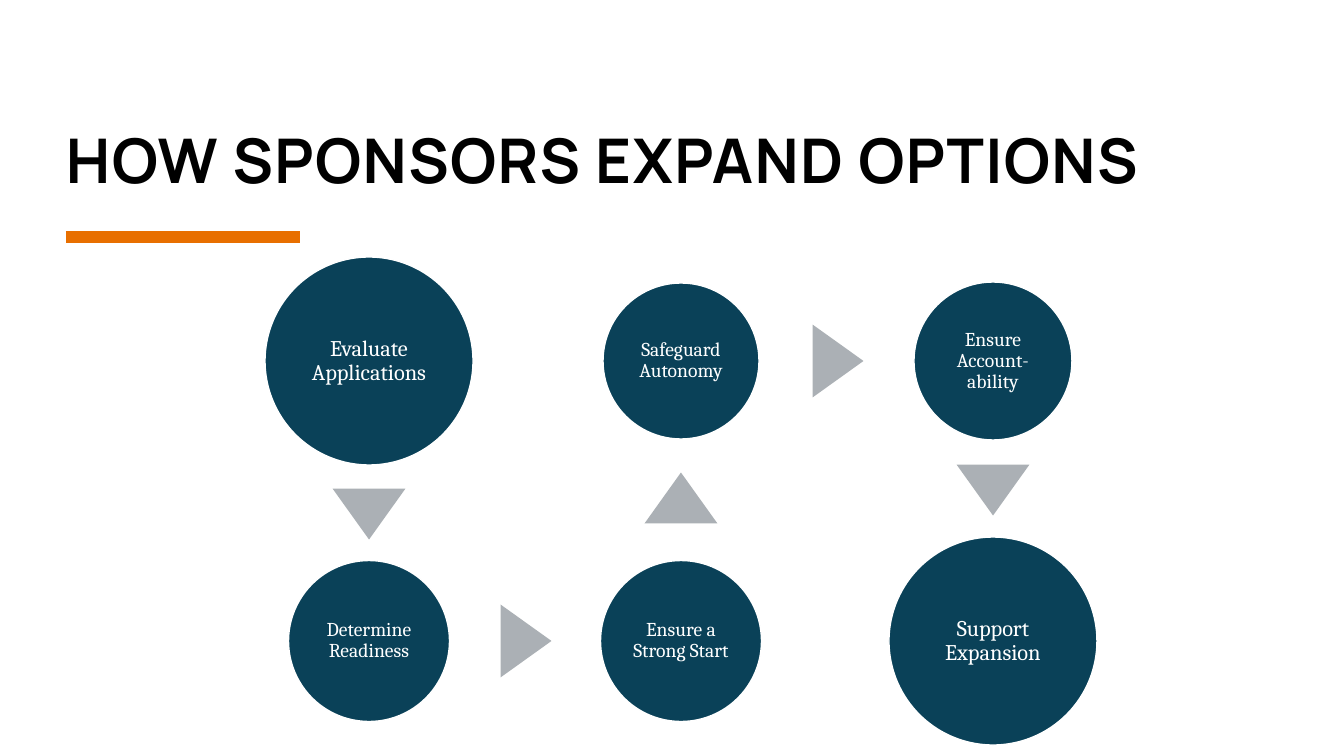
import pptx
import pptx.dml.color
import pptx.enum.shapes
import pptx.enum.text
import pptx.oxml.ns
import pptx.util
import lxml.etree

PX = 914400 / 100.8
COLORS = {"ink": "000000", "rule": "E86F00", "step": "0A4158",
          "arrow": "ABB0B5", "white": "FFFFFF"}
SHAPE = pptx.enum.shapes.MSO_SHAPE
ALIGN = pptx.enum.text.PP_ALIGN


def px(*sizes):
    return [pptx.util.Emu(round(size * PX)) for size in sizes]


def write(shape, text, inset, anchor, para, font, color):
    frame = shape.text_frame
    frame.text = text
    first = frame.paragraphs[0]
    margin = px(inset)[0]
    box = {"margin_left": margin, "margin_right": margin,
           "margin_top": margin, "margin_bottom": margin,
           "auto_size": pptx.enum.text.MSO_AUTO_SIZE.NONE,
           "vertical_anchor": anchor, "word_wrap": True}
    for part, values in ((frame, box), (first, para), (first.runs[0].font, font)):
        for name, value in values.items():
            setattr(part, name, value)
    first.runs[0].font.color.rgb = pptx.dml.color.RGBColor.from_string(COLORS[color])


deck = pptx.Presentation()
deck.slide_width, deck.slide_height = px(1344, 756)
slide = deck.slides.add_slide(deck.slide_layouts[5])

# Title
title = slide.shapes.title
title.left, title.top, title.width, title.height = px(66, 22, 1210, 173)
write(title, "HOW SPONSORS EXPAND OPTIONS", 0, pptx.enum.text.MSO_ANCHOR.BOTTOM,
      {"alignment": ALIGN.LEFT, "line_spacing": 0.8},
      {"name": "Manrope", "size": pptx.util.Pt(44), "bold": True}, "ink")
title.text_frame.paragraphs[0].runs[0].font._element.set("spc", "100")

# Rule under the title
rule = slide.shapes.add_connector(
    pptx.enum.shapes.MSO_CONNECTOR.STRAIGHT, *px(66, 237, 300, 237))
rule.line.color.rgb = pptx.dml.color.RGBColor.from_string(COLORS["rule"])
rule.line.width = pptx.util.Pt(8)
lxml.etree.SubElement(rule._element.spPr, pptx.oxml.ns.qn("a:effectLst"))

# Steps: column, row, width, text size, text
COLS = [369 + 312 * col for col in range(3)]
ROWS = [361, 641]
STEPS = [
    (0, 0, 208, 16, "Evaluate Applications"),
    (0, 1, 161, 14, "Determine Readiness"),
    (1, 1, 161, 14, "Ensure a Strong Start"),
    (1, 0, 156, 14, "Safeguard Autonomy"),
    (2, 0, 158, 14, "Ensure Account-ability"),
    (2, 1, 208, 16, "Support Expansion"),
]
for col, row, width, size, text in STEPS:
    step = slide.shapes.add_shape(SHAPE.OVAL, *px(
        COLS[col] - width / 2, ROWS[row] - width / 2, width, width))
    step.shadow.inherit = False
    step.fill.solid()
    step.fill.fore_color.rgb = pptx.dml.color.RGBColor.from_string(COLORS["step"])
    step.line.color.rgb = pptx.dml.color.RGBColor.from_string(COLORS["white"])
    step.line.width = pptx.util.Pt(1)
    write(step, text, 2, pptx.enum.text.MSO_ANCHOR.MIDDLE,
          {"alignment": ALIGN.CENTER, "line_spacing": 0.9},
          {"name": "Cambria", "size": pptx.util.Pt(size)}, "white")

# Arrows between steps: centre and turn
WIDE, HIGH = 73, 51
ARROWS = [(COLS[0], 514, 180), (526, ROWS[1], 90), (COLS[1], 498, 0),
          (838, ROWS[0], 90), (COLS[2], 490, 180)]
for mid, level, turn in ARROWS:
    arrow = slide.shapes.add_shape(SHAPE.ISOSCELES_TRIANGLE, *px(
        mid - WIDE / 2, level - HIGH / 2, WIDE, HIGH))
    arrow.rotation = turn
    arrow.shadow.inherit = False
    arrow.fill.solid()
    arrow.fill.fore_color.rgb = pptx.dml.color.RGBColor.from_string(COLORS["arrow"])
    arrow.line.fill.background()

deck.save("out.pptx")
